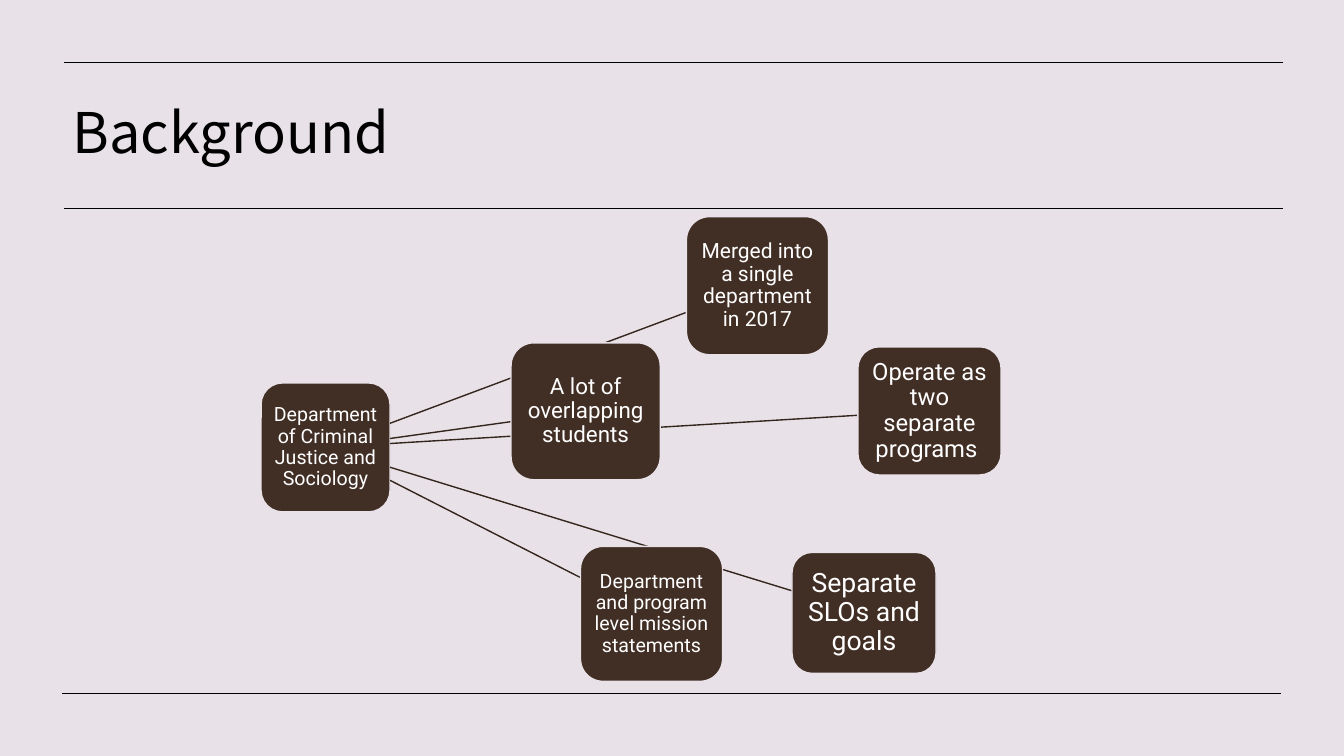
from pptx import Presentation
from pptx.dml.color import RGBColor
from pptx.enum.shapes import MSO_CONNECTOR, MSO_SHAPE
from pptx.enum.text import MSO_ANCHOR as ANCHOR, MSO_AUTO_SIZE, PP_ALIGN as ALIGN
from pptx.oxml.ns import qn
from pptx.util import Cm, Pt
from lxml.etree import SubElement

COLORS = {"background": "E8E2E8", "rule": "000000", "title": "000000",
          "node": "412E24", "spoke": "34251D", "node_text": "FFFFFF"}
TITLE_FONT = "Noto Sans CJK KR"
NODE_FONT = "Roboto"

# Text, font size, then left, top, width and height in cm within the diagram
HUB = ("Department of Criminal Justice and Sociology", 14, (0, 4.19, 3.25, 3.25))
BRANCHES = [
    ("Merged into a single department in 2017", 15, (10.72, 0, 3.58, 3.48)),
    ("Operate as two separate programs ", 17, (15.04, 3.28, 3.61, 3.23)),
    ("Separate SLOs and goals", 19, (13.38, 8.46, 3.63, 3.05)),
    ("Department and program level mission statements", 14, (8.05, 8.31, 3.58, 3.4)),
    ("A lot of overlapping students", 16, (6.3, 3.18, 3.76, 3.45)),
]


def color(name):
    return RGBColor.from_string(COLORS[name])


def add_line(slide, start, end, color_name, width):
    line = slide.shapes.add_connector(
        MSO_CONNECTOR.STRAIGHT, *(Cm(v) for v in (*start, *end)))
    line.line.color.rgb = color(color_name)
    line.line.width = Pt(width)
    SubElement(line._element.spPr, qn("a:effectLst"))


def add_rules(slide, box):
    """Draw the two rules around the title and the one at the foot."""
    left, top, width, height = box
    for dx, dy in ((0, 0), (0, 3.66), (-0.04, height)):
        add_line(slide, (left + dx, top + dy), (left + dx + width, top + dy), "rule", 0.5)


def add_title(slide, box, text):
    title = slide.shapes.title
    title.left, title.top, title.width, title.height = (Cm(v) for v in box)
    tf = title.text_frame
    tf.text = text
    tf.word_wrap = True
    tf.auto_size = MSO_AUTO_SIZE.NONE
    tf.vertical_anchor = ANCHOR.MIDDLE
    p = tf.paragraphs[0]
    p.alignment = ALIGN.LEFT
    p.line_spacing = 0.9
    p.font.name = TITLE_FONT
    p.font.size = Pt(40)
    p.font.color.rgb = color("title")


def add_node(slide, box, text, size):
    sp = slide.shapes.add_shape(MSO_SHAPE.ROUNDED_RECTANGLE, *(Cm(v) for v in box))
    sp.shadow.inherit = False
    sp.fill.solid()
    sp.fill.fore_color.rgb = color("node")
    sp.line.color.rgb = color("background")
    sp.line.width = Pt(1)
    tf = sp.text_frame
    tf.word_wrap = True
    tf.vertical_anchor = ANCHOR.MIDDLE
    tf.margin_left = tf.margin_right = tf.margin_top = tf.margin_bottom = Cm(0.11)
    p = tf.paragraphs[0]
    p.text = text
    p.alignment = ALIGN.CENTER
    p.line_spacing = 0.9
    p.font.name = NODE_FONT
    p.font.size = Pt(size)
    p.font.color.rgb = color("node_text")


def add_spoke(slide, hub, node):
    """Draw the part of the line between the centres that lies between the boxes."""
    (x1, y1), (x2, y2) = ((x + w / 2, y + h / 2) for x, y, w, h in (hub, node))
    slope = (y2 - y1) / (x2 - x1)
    start, end = hub[0] + hub[2], node[0]
    add_line(slide, (start, y1 + (start - x1) * slope),
             (end, y1 + (end - x1) * slope), "spoke", 1)


def add_diagram(slide, origin):
    def place(box):
        x, y, w, h = box
        return origin[0] + x, origin[1] + y, w, h

    text, size, box = HUB
    hub = place(box)
    add_node(slide, hub, text, size)
    for text, size, box in BRANCHES:
        node = place(box)
        add_spoke(slide, hub, node)
        add_node(slide, node, text, size)


def main():
    prs = Presentation()
    prs.slide_width, prs.slide_height = Cm(33.87), Cm(19.05)
    slide = prs.slides.add_slide(prs.slide_layouts.get_by_name("Title Only"))
    fill = slide.background.fill
    fill.solid()
    fill.fore_color.rgb = color("background")
    add_rules(slide, (1.61, 1.58, 30.72, 15.88))
    add_title(slide, (1.58, 1.9, 30.68, 3.02), "Background")
    add_diagram(slide, (6.58, 5.46))
    prs.save("out.pptx")


if __name__ == "__main__":
    main()
